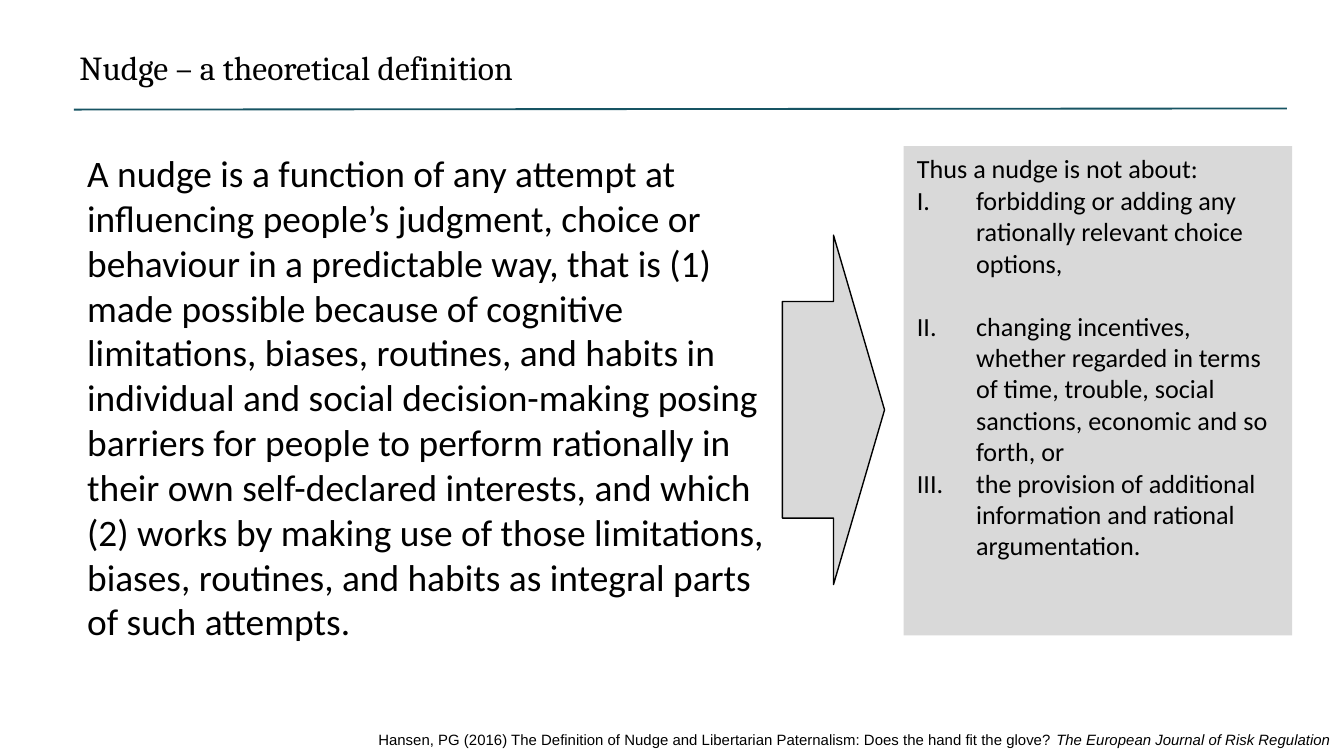
from dataclasses import dataclass

from lxml import etree
from pptx import Presentation
from pptx import util as u
from pptx.dml.color import RGBColor
from pptx.enum import shapes, text
from pptx.oxml.ns import qn

WIDTH = 10
HEIGHT = WIDTH * 9 / 16
COLOURS = {"ink": "000000", "rule": "175463", "panel": "D9D9D9"}
ITEM_INDENT = u.Inches(0.44)

DEFINITION = (
    "A nudge is a function of any attempt at influencing people’s judgment, choice or "
    "behaviour in a predictable way, that is (1) made possible because of cognitive "
    "limitations, biases, routines, and habits in individual and social decision-making "
    "posing barriers for people to perform rationally in their own self-declared interests, "
    "and which (2) works by making use of those limitations, biases, routines, and habits "
    "as integral parts of such attempts."
)
CITATION = (
    "Hansen, PG (2016) The Definition of Nudge and Libertarian Paternalism: "
    "Does the hand fit the glove? "
)
JOURNAL = "The European Journal of Risk Regulation"


@dataclass(frozen=True)
class Area:
    """Left, top, width and height as percentages of the slide's size."""
    left: float
    top: float
    width: float
    height: float

    def lengths(self) -> tuple:
        return (across(self.left), down(self.top), across(self.width), down(self.height))


@dataclass(frozen=True)
class Style:
    font: str
    size: float


@dataclass(frozen=True)
class Exclusion:
    wording: str
    gap_after: float = 0


HEADING = Style("Cambria", 18)
BODY = Style("Calibri", 20)
LIST = Style("Calibri", 14)
SOURCE = Style("Arial", 8)

EXCLUSIONS = (
    Exclusion("forbidding or adding any rationally relevant choice options,", 17),
    Exclusion("changing incentives, whether regarded in terms of time, trouble, "
              "social sanctions, economic and so forth, or"),
    Exclusion("the provision of additional information and rational argumentation."),
)


def across(share: float) -> int:
    return u.Inches(WIDTH * share / 100)


def down(share: float) -> int:
    return u.Inches(HEIGHT * share / 100)


def colour(name: str) -> RGBColor:
    return RGBColor.from_string(COLOURS[name])


def add_run(paragraph, wording: str, style: Style, italic: bool = False) -> None:
    run = paragraph.add_run()
    run.text = wording
    run.font.name = style.font
    run.font.size = u.Pt(style.size)
    run.font.italic = italic
    run.font.color.rgb = colour("ink")


def prepare_frame(holder, align=text.PP_ALIGN.LEFT):
    """Make the frame wrap from the top and return its first paragraph."""
    frame = holder.text_frame
    frame.word_wrap = True
    frame.auto_size = text.MSO_AUTO_SIZE.NONE
    frame.vertical_anchor = text.MSO_ANCHOR.TOP
    first = frame.paragraphs[0]
    first.alignment = align
    return first


def add_panel(slide, kind, area: Area):
    panel = slide.shapes.add_shape(kind, *area.lengths())
    panel.shadow.inherit = False
    panel.fill.solid()
    panel.fill.fore_color.rgb = colour("panel")
    panel.line.fill.background()
    return panel


def add_numbered(frame, item: Exclusion) -> None:
    """Add an item with a hanging upper-case Roman numeral."""
    paragraph = frame.add_paragraph()
    paragraph.alignment = text.PP_ALIGN.LEFT
    paragraph.space_after = u.Pt(item.gap_after)
    properties = paragraph._p.get_or_add_pPr()
    properties.set("marL", str(ITEM_INDENT))
    properties.set("indent", str(-ITEM_INDENT))
    etree.SubElement(properties, qn("a:buFont"), typeface="+mj-lt")
    etree.SubElement(properties, qn("a:buAutoNum"), type="romanUcPeriod")
    add_run(paragraph, item.wording, LIST)


def add_title(slide) -> None:
    title = slide.shapes.title
    title.left, title.top, title.width, title.height = Area(4.9, 5.25, 76.8, 7.11).lengths()
    add_run(prepare_frame(title), "Nudge – a theoretical definition", HEADING)


def add_rule(slide) -> None:
    rule = slide.shapes.add_connector(
        shapes.MSO_CONNECTOR.STRAIGHT,
        across(5.5), down(14.5), across(95.75), down(14.35))
    rule.line.color.rgb = colour("rule")
    rule.line.width = u.Pt(1)
    etree.SubElement(rule._element.spPr, qn("a:effectLst"))


def add_exclusions(slide) -> None:
    panel = add_panel(slide, shapes.MSO_SHAPE.RECTANGLE, Area(67.24, 19.33, 28.9, 64.71))
    add_run(prepare_frame(panel), "Thus a nudge is not about:", LIST)
    for item in EXCLUSIONS:
        add_numbered(panel.text_frame, item)


def add_arrow(slide) -> None:
    arrow = add_panel(slide, shapes.MSO_SHAPE.RIGHT_ARROW, Area(58.22, 31.11, 7.6, 46.22))
    arrow.adjustments[0] = 0.62
    arrow.adjustments[1] = 0.5
    arrow.line.color.rgb = colour("ink")
    arrow.line.width = u.Pt(0.75)


def main() -> None:
    deck = Presentation()
    deck.slide_width, deck.slide_height = u.Inches(WIDTH), u.Inches(HEIGHT)
    slide = deck.slides.add_slide(deck.slide_layouts[5])

    add_title(slide)
    add_rule(slide)

    definition = slide.shapes.add_textbox(*Area(5.5, 19.02, 52.8, 67.56).lengths())
    add_run(prepare_frame(definition), DEFINITION, BODY)

    add_exclusions(slide)
    add_arrow(slide)

    source = slide.shapes.add_textbox(*Area(0, 95.82, 100, 4.27).lengths())
    reference = prepare_frame(source, text.PP_ALIGN.RIGHT)
    add_run(reference, CITATION, SOURCE)
    add_run(reference, JOURNAL, SOURCE, italic=True)

    deck.save("out.pptx")


if __name__ == "__main__":
    main()
